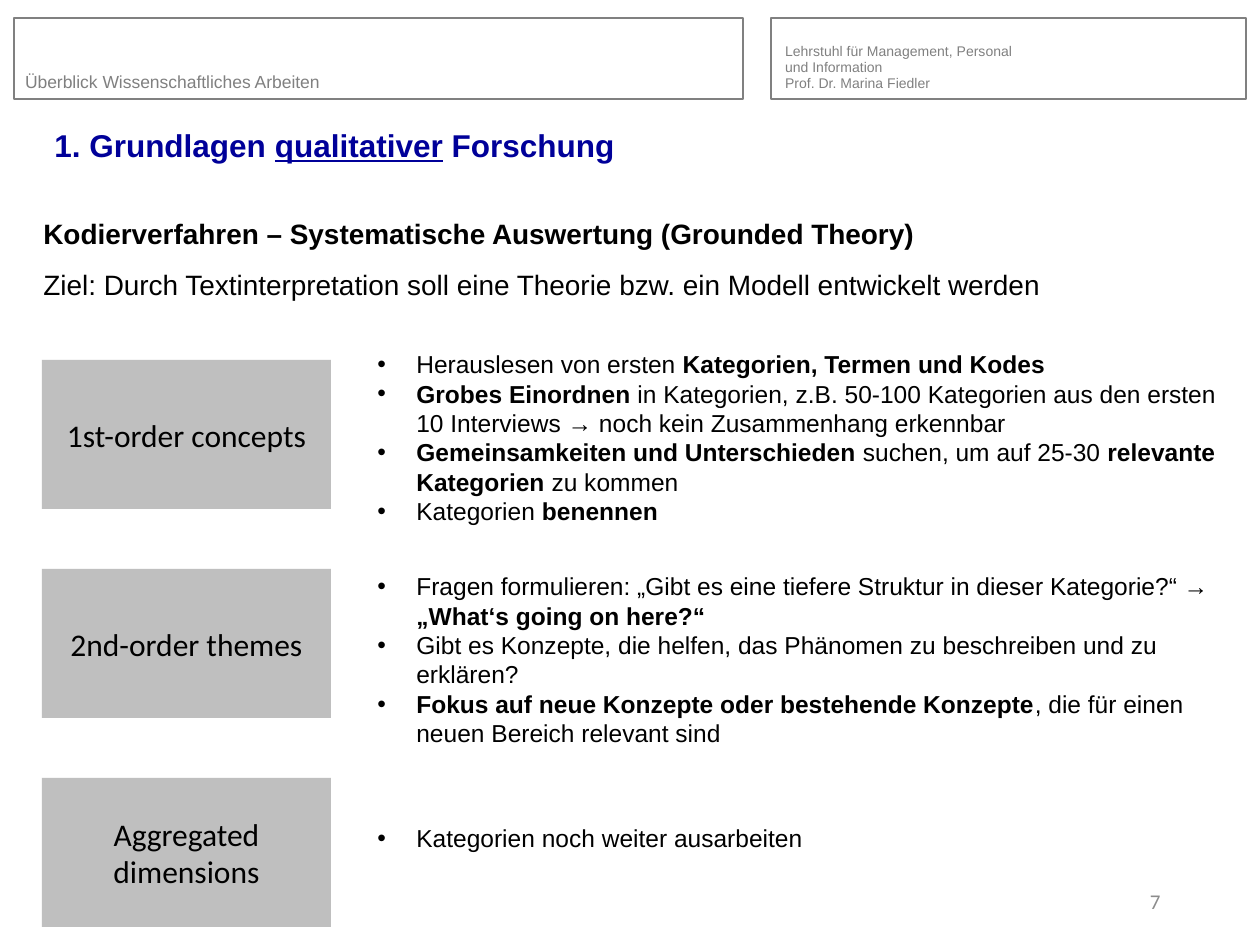
from dataclasses import dataclass

from lxml.etree import SubElement
from pptx import Presentation
from pptx.dml.color import RGBColor
from pptx.enum.shapes import MSO_SHAPE as Shape
from pptx.enum.text import MSO_ANCHOR as Anchor, PP_ALIGN as Align
from pptx.oxml.ns import qn
from pptx.util import Pt

PX = 914400 / 126  # EMU in one px


@dataclass(frozen=True)
class Theme:
    sans: str = "Arial"
    label: str = "Calibri"
    black: str = "000000"
    title: str = "000099"
    grey: str = "808080"
    number: str = "8C8C8C"
    block: str = "BFBFBF"
    title_pt: int = 18
    body_pt: int = 16
    bullet_pt: int = 14
    number_pt: int = 12
    topic_pt: int = 10
    chair_pt: int = 8


THEME = Theme()

# Content: a paragraph is a list of (text, style) runs; b = bold, u = underlined
TOPIC = [[("Überblick Wissenschaftliches Arbeiten", "")]]
CHAIR = [
    [("Lehrstuhl für Management, Personal\nund Information", "")],
    [("Prof. Dr. Marina Fiedler", "")],
]
TITLE = [[("1. Grundlagen ", "b"), ("qualitativer", "bu"), (" Forschung", "b")]]
INTRO = [
    [("Kodierverfahren – Systematische Auswertung (Grounded Theory)", "b")],
    [("Ziel: Durch Textinterpretation soll eine Theorie bzw. ein Modell entwickelt werden", "")],
]
PAGE = [[("7", "")]]

# Each step: label, top and height of its bullet list, bullets
STEPS = [
    ("1st-order concepts", 343, 190, [
        [("Herauslesen von ersten ", ""), ("Kategorien, Termen und Kodes", "b")],
        [("Grobes Einordnen ", "b"),
         ("in Kategorien, z.B. 50-100 Kategorien aus den ersten 10 Interviews → "
          "noch kein Zusammenhang erkennbar", "")],
        [("Gemeinsamkeiten und Unterschieden ", "b"), ("suchen, um auf 25-30 ", ""),
         ("relevante Kategorien ", "b"), ("zu kommen", "")],
        [("Kategorien ", ""), ("benennen", "b")],
    ]),
    ("2nd-order themes", 565, 190, [
        [("Fragen formulieren: „Gibt es eine tiefere Struktur in dieser Kategorie?“ → ", ""),
         ("„What‘s going on here?“", "b")],
        [("Gibt es Konzepte, die helfen, das Phänomen zu beschreiben und zu erklären?", "")],
        [("Fokus auf neue Konzepte oder bestehende Konzepte", "b"),
         (", die für einen neuen Bereich relevant sind", "")],
    ]),
    ("Aggregated dimensions", 817, 43, [
        [("Kategorien noch weiter ausarbeiten", "")],
    ]),
]

# Layout in px
HEADER_FRAMES = [(14, 18, 729, 81), (771, 18, 475, 81)]
BLOCK_LEFT, BLOCK_TOP, BLOCK_PITCH = 42, 360, 209
BLOCK_SIZE = (289, 149)
LIST_LEFT, LIST_WIDTH = 365, 883
BULLET_INDENT = 39


def emu(*lengths):
    return [round(length * PX) for length in lengths]


def add_bullet(paragraph):
    props = paragraph._p.get_or_add_pPr()
    indent, = emu(BULLET_INDENT)
    props.set("marL", str(indent))
    props.set("indent", str(-indent))
    SubElement(props, qn("a:buFont")).set("typeface", THEME.sans)
    SubElement(props, qn("a:buChar")).set("char", "•")


def write(frame, paragraphs, size, color=THEME.black, font=THEME.sans, align=Align.LEFT,
          anchor=Anchor.TOP, spacing=None, gap=0, bullets=False, inset=True):
    frame.word_wrap = True
    frame.vertical_anchor = anchor
    if not inset:
        frame.margin_left = frame.margin_top = frame.margin_right = frame.margin_bottom = 0
    for index, runs in enumerate(paragraphs):
        paragraph = frame.add_paragraph() if index else frame.paragraphs[0]
        paragraph.alignment = align
        if spacing:
            paragraph.line_spacing = spacing
        if index and gap:
            paragraph.space_before = Pt(gap)
        if bullets:
            add_bullet(paragraph)
        for text, style in runs:
            for number, line in enumerate(text.split("\n")):
                if number:
                    paragraph.add_line_break()
                run = paragraph.add_run()
                run.text = line
                run.font.name = font
                run.font.size = Pt(size)
                run.font.bold = "b" in style
                run.font.underline = "u" in style
                run.font.color.rgb = RGBColor.from_string(color)


def add_text(slide, box, paragraphs, size, **options):
    write(slide.shapes.add_textbox(*emu(*box)).text_frame, paragraphs, size, **options)


def add_rect(slide, box, fill=None, line=None):
    rect = slide.shapes.add_shape(Shape.RECTANGLE, *emu(*box))
    rect.shadow.inherit = False
    if fill:
        rect.fill.solid()
        rect.fill.fore_color.rgb = RGBColor.from_string(fill)
    else:
        rect.fill.background()
    if line:
        rect.line.color.rgb = RGBColor.from_string(line)
        rect.line.width = Pt(0.75)
    else:
        rect.line.fill.background()
    return rect


def main():
    deck = Presentation()
    deck.slide_width, deck.slide_height = emu(1260, 945)
    slide = deck.slides.add_slide(deck.slide_layouts[6])

    # Header
    for box in HEADER_FRAMES:
        add_rect(slide, box, line=THEME.grey)
    add_text(slide, (25, 38, 421, 54), TOPIC, THEME.topic_pt, color=THEME.grey,
             anchor=Anchor.BOTTOM, inset=False)
    add_text(slide, (785, 30, 369, 62), CHAIR, THEME.chair_pt, color=THEME.grey,
             anchor=Anchor.BOTTOM, spacing=0.95, inset=False)

    # Page number, title and introduction
    add_text(slide, (890, 876, 283, 50), PAGE, THEME.number_pt, color=THEME.number,
             font=THEME.label, align=Align.RIGHT, anchor=Anchor.MIDDLE)
    add_text(slide, (42, 116, 1187, 63), TITLE, THEME.title_pt, color=THEME.title,
             anchor=Anchor.MIDDLE, spacing=0.9)
    add_text(slide, (31, 210, 1197, 101), INTRO, THEME.body_pt, gap=10)

    # Coding steps: grey block on the left, bullets on the right
    for row, (label, list_top, list_height, bullets) in enumerate(STEPS):
        block = add_rect(slide, (BLOCK_LEFT, BLOCK_TOP + row * BLOCK_PITCH, *BLOCK_SIZE),
                         fill=THEME.block)
        write(block.text_frame, [[(label, "")]], THEME.title_pt, font=THEME.label,
              align=Align.CENTER, anchor=Anchor.MIDDLE)
        add_text(slide, (LIST_LEFT, list_top, LIST_WIDTH, list_height), bullets,
                 THEME.bullet_pt, bullets=True)

    deck.save("out.pptx")


if __name__ == "__main__":
    main()
